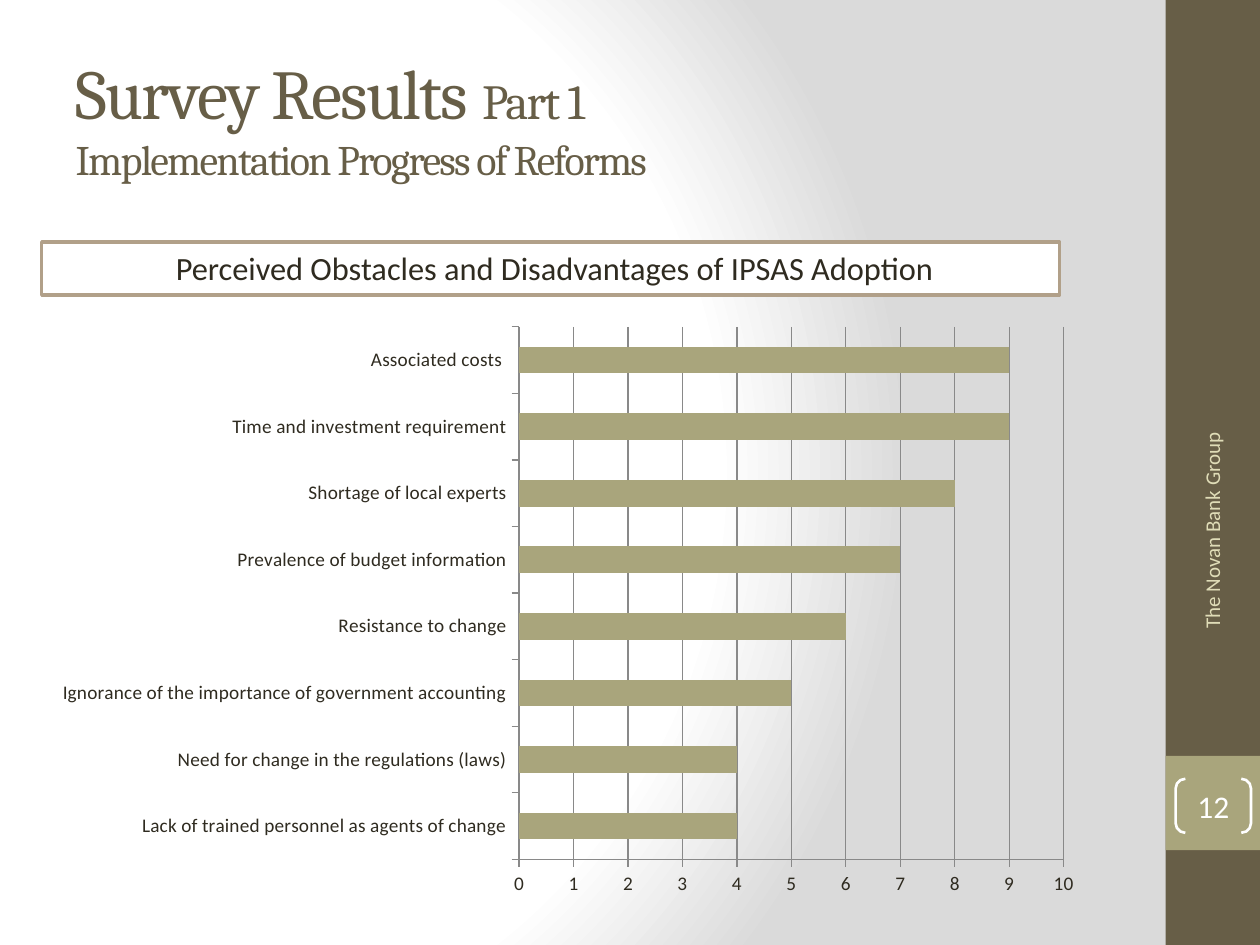
from dataclasses import dataclass

from lxml.etree import SubElement
from pptx import Presentation
from pptx.chart.data import CategoryChartData
from pptx.dml.color import RGBColor
from pptx.enum.chart import XL_CHART_TYPE as ChartType, XL_TICK_MARK as Tick
from pptx.enum.shapes import MSO_SHAPE as Shape
from pptx.enum.text import MSO_ANCHOR as Anchor, PP_ALIGN as Align
from pptx.oxml import parse_xml
from pptx.oxml.ns import nsdecls, qn
from pptx.util import Cm, Pt


@dataclass(frozen=True)
class Theme:
    """Colours, fonts and type sizes of the slide."""
    dark: str = "675E47"
    accent: str = "A9A57C"
    border: str = "B1A089"
    text: str = "2F2B20"
    pale: str = "DFDCB7"
    white: str = "FFFFFF"
    shade: str = "DADADA"
    grid: str = "898989"
    head_font: str = "Cambria"
    body_font: str = "Calibri"
    title: float = 40
    title_suffix: float = 28
    subtitle: float = 24
    banner: float = 18.5
    number: float = 18
    footer: float = 12
    chart: float = 11


T = Theme()

OBSTACLES = [
    ("Lack of trained personnel as agents of change", 4),
    ("Need for change in the regulations (laws)", 4),
    ("Ignorance of the importance of government accounting", 5),
    ("Resistance to change", 6),
    ("Prevalence of budget information", 7),
    ("Shortage of local experts", 8),
    ("Time and investment requirement", 9),
    ("Associated costs ", 9),
]


def rgb(color):
    """Return a colour object for a hex string."""
    return RGBColor.from_string(color)


def place(sp, left, top, width, height):
    """Move and size a shape, in centimetres."""
    sp.left, sp.top, sp.width, sp.height = map(Cm, (left, top, width, height))


def add_run(p, text, size, color=T.text, font=T.body_font, spacing=None):
    """Add a formatted run to a paragraph."""
    r = p.add_run()
    r.text = text
    r.font.size, r.font.name = Pt(size), font
    r.font.color.rgb = rgb(color)
    if spacing is not None:
        r.font._element.set("spc", str(spacing * 100))


def add_box(s, kind, left, top, width, height, fill=None, line=None, weight=1):
    """Add a preset shape without shadow."""
    sp = s.shapes.add_shape(kind, *map(Cm, (left, top, width, height)))
    sp.shadow.inherit = False
    if fill:
        sp.fill.solid()
        sp.fill.fore_color.rgb = rgb(fill)
    else:
        sp.fill.background()
    if line:
        sp.line.color.rgb = rgb(line)
        sp.line.width = Pt(weight)
    else:
        sp.line.fill.background()
    return sp


def set_background(s):
    """Fill the background with a circular gradient."""
    s.background.fill.solid()
    solid = s.element.find(".//" + qn("p:bgPr")).find(qn("a:solidFill"))
    stops = "".join(
        f'<a:gs pos="{pos * 1000}"><a:srgbClr val="{color}"/></a:gs>'
        for pos, color in ((0, T.white), (75, T.white), (100, T.shade)))
    grad = parse_xml(
        f'<a:gradFill {nsdecls("a")} rotWithShape="1"><a:gsLst>{stops}</a:gsLst>'
        '<a:path path="circle"><a:fillToRect l="20000" t="50000" r="100000" '
        'b="50000"/></a:path></a:gradFill>')
    solid.getparent().replace(solid, grad)


def fill_title(sp, left, top, width, height):
    """Write the two-line title."""
    place(sp, left, top, width, height)
    tf = sp.text_frame
    tf.word_wrap, tf.vertical_anchor = True, Anchor.MIDDLE
    p = tf.paragraphs[0]
    p.alignment = Align.LEFT
    look = dict(color=T.dark, font=T.head_font, spacing=-1)
    add_run(p, "Survey Results ", T.title, **look)
    add_run(p, "Part 1", T.title_suffix, **look)
    p.add_line_break()
    add_run(p, "Implementation Progress of Reforms", T.subtitle, **look)


def fill_banner(sp, left, top, width, height):
    """Write the framed heading of the chart."""
    place(sp, left, top, width, height)
    sp.fill.solid()
    sp.fill.fore_color.rgb = rgb(T.white)
    sp.line.color.rgb = rgb(T.border)
    sp.line.width = Pt(2)
    p = sp.text_frame.paragraphs[0]
    p.alignment, p.space_before = Align.CENTER, Pt(0)
    props = p._p.get_or_add_pPr()
    props.set("marL", str(Cm(0.3)))
    props.set("indent", "0")
    SubElement(props, qn("a:buNone"))
    add_run(p, "Perceived Obstacles and Disadvantages of IPSAS Adoption ", T.banner)


def add_sidebar(s, left, top, width, height):
    """Draw the side band with the group name and the slide number."""
    add_box(s, Shape.RECTANGLE, left, top, width, height, fill=T.dark)
    tile_top = top + height * 0.8
    add_box(s, Shape.RECTANGLE, left, tile_top, width, width, fill=T.accent)

    length, depth = 6.58, 1.02
    name = s.shapes.add_textbox(
        Cm(left + 0.93 - length / 2), Cm(top + 11.76 - depth / 2), Cm(length), Cm(depth))
    name.rotation = 270
    tf = name.text_frame
    tf.word_wrap, tf.vertical_anchor = True, Anchor.MIDDLE
    tf.paragraphs[0].alignment = Align.RIGHT
    add_run(tf.paragraphs[0], "The Novan Bank Group", T.footer, color=T.pale)

    number = add_box(s, Shape.DOUBLE_BRACKET, left + 0.2, tile_top + 0.46, 1.52, 1.09,
                     line=T.white, weight=1.5)
    number.adjustments[0] = 0.18
    tf = number.text_frame
    tf.margin_left = tf.margin_right = tf.margin_top = tf.margin_bottom = 0
    tf.vertical_anchor = Anchor.MIDDLE
    tf.paragraphs[0].alignment = Align.CENTER
    add_run(tf.paragraphs[0], "12", T.number, color=T.white)


def add_obstacle_chart(s, left, top, width, height):
    """Add the bar chart of obstacles."""
    data = CategoryChartData(number_format="General")
    data.categories = [label for label, _ in OBSTACLES]
    data.add_series("Series 1", [value for _, value in OBSTACLES])
    chart = s.shapes.add_chart(
        ChartType.BAR_CLUSTERED, *map(Cm, (left, top, width, height)), data).chart
    chart.has_legend = chart.has_title = False
    chart.font.size, chart.font.name = Pt(T.chart), T.body_font
    chart.font.color.rgb = rgb(T.text)
    plot = chart.plots[0]
    plot.gap_width, plot.vary_by_categories = 150, False
    fill = plot.series[0].format.fill
    fill.solid()
    fill.fore_color.rgb = rgb(T.accent)
    values = chart.value_axis
    values.minimum_scale, values.maximum_scale, values.major_unit = 0, 10, 1
    values.has_major_gridlines = True
    for axis in (chart.category_axis, values):
        axis.major_tick_mark, axis.minor_tick_mark = Tick.OUTSIDE, Tick.NONE
    for ruled in (chart.category_axis, values, values.major_gridlines):
        ruled.format.line.color.rgb = rgb(T.grid)
        ruled.format.line.width = Pt(0.75)


def main():
    """Build the slide and save it."""
    prs = Presentation()
    prs.slide_width, prs.slide_height = Cm(25.4), Cm(19.05)
    s = prs.slides.add_slide(prs.slide_layouts[1])
    set_background(s)
    add_sidebar(s, 23.5, 0, 1.9, 19.05)
    fill_banner(s.placeholders[1], 0.84, 4.88, 20.52, 1.07)
    fill_title(s.shapes.title, 1.27, 0.76, 21.16, 3.18)
    add_obstacle_chart(s, 0.84, 6.35, 21.23, 11.94)
    prs.save("out.pptx")


if __name__ == "__main__":
    main()
